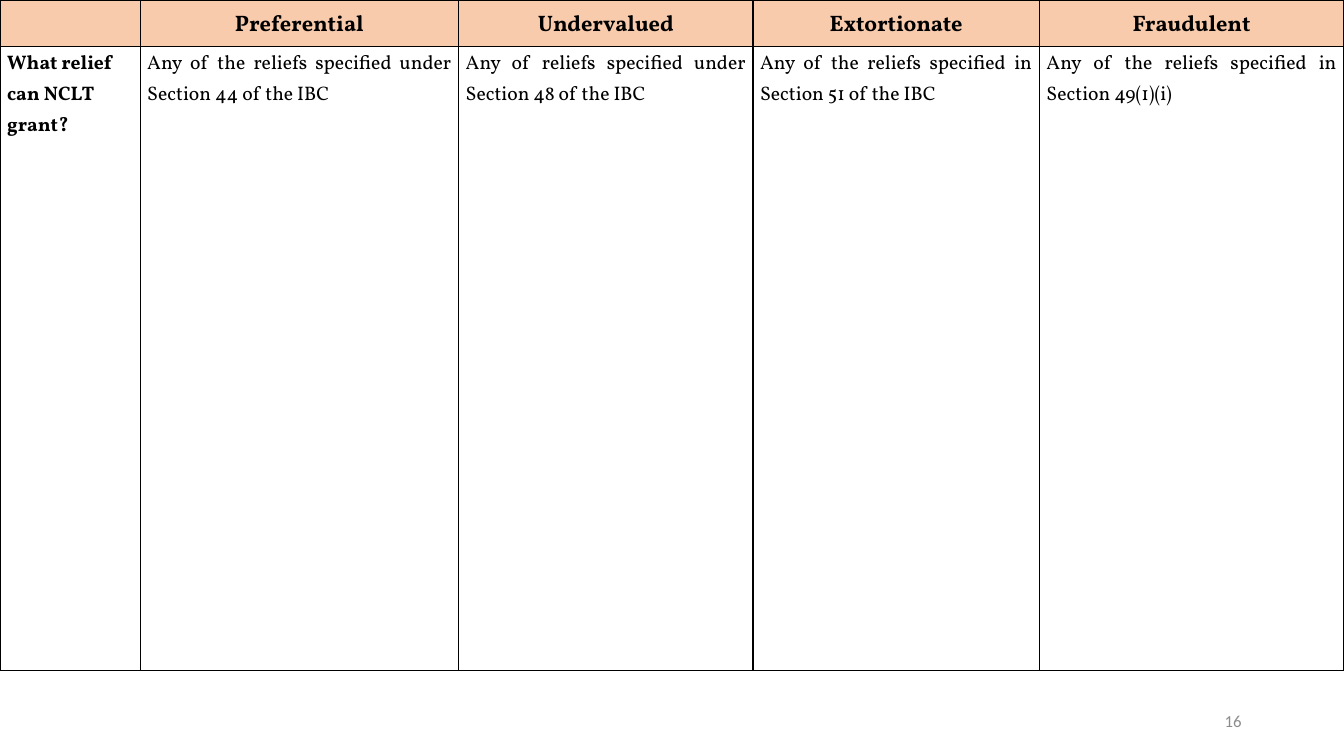
"""Build a slide comparing the reliefs available for four kinds of avoidable transaction."""
from dataclasses import dataclass

from lxml.etree import SubElement
from pptx import Presentation
from pptx.dml.color import RGBColor
from pptx.enum.text import MSO_ANCHOR, PP_ALIGN
from pptx.oxml.ns import qn
from pptx.slide import Slide
from pptx.table import _Cell as Cell
from pptx.text.text import TextFrame
from pptx.util import Pt


@dataclass(frozen=True)
class Theme:
    """Colours, fonts and type sizes of the slide."""

    header_fill: str = "F8CBAD"
    body_fill: str = "FFFFFF"
    ink: str = "000000"
    muted: str = "8C8C8C"
    table_font: str = "Vollkorn"
    number_font: str = "Calibri"
    header_size: float = 16
    body_size: float = 14
    number_size: float = 12


@dataclass(frozen=True)
class Column:
    """One table column: its width in points, heading and body text."""

    width: float
    heading: str
    body: str


THEME = Theme()
HEADER_HEIGHT = 33.1
BODY_HEIGHT = 445.7
CELL_INSET = 5.1
COLUMNS = [
    Column(100.1, "", "What relief can NCLT grant?"),
    Column(227.5, "Preferential", "Any of the reliefs specified under Section 44 of the IBC"),
    Column(210.3, "Undervalued", "Any of reliefs specified under Section 48 of the IBC"),
    Column(204.6, "Extortionate", "Any of the reliefs specified in Section 51 of the IBC"),
    Column(217.5, "Fraudulent", "Any of the reliefs specified in Section 49(1)(i)"),
]


def write_text(frame: TextFrame, text: str, *, size: float, font: str = THEME.table_font,
               color: str = THEME.ink, bold: bool = False,
               align: PP_ALIGN = PP_ALIGN.LEFT, line_spacing: float = 1.0) -> None:
    """Write one formatted paragraph into a text frame."""
    paragraph = frame.paragraphs[0]
    paragraph.alignment = align
    paragraph.line_spacing = line_spacing
    paragraph.font.size = Pt(size)
    if text:
        run = paragraph.add_run()
        run.text = text
        run.font.size = Pt(size)
        run.font.name = font
        run.font.bold = bold
        run.font.color.rgb = RGBColor.from_string(color)


def style_cell(cell: Cell, fill: str, anchor: MSO_ANCHOR) -> None:
    """Set the insets, anchor, borders and fill of a cell."""
    cell.margin_left = cell.margin_right = Pt(CELL_INSET)
    cell.margin_top = cell.margin_bottom = 0
    cell.vertical_anchor = anchor
    properties = cell._tc.get_or_add_tcPr()
    for side in ("a:lnL", "a:lnR", "a:lnT", "a:lnB"):
        line = SubElement(properties, qn(side), w=str(Pt(1)))
        solid = SubElement(line, qn("a:solidFill"))
        SubElement(solid, qn("a:srgbClr"), val=THEME.ink)
    cell.fill.solid()
    cell.fill.fore_color.rgb = RGBColor.from_string(fill)


def add_relief_table(slide: Slide) -> None:
    """Add the table of reliefs across the full slide width."""
    width = sum(column.width for column in COLUMNS)
    table = slide.shapes.add_table(2, len(COLUMNS), 0, 0, Pt(width),
                                   Pt(HEADER_HEIGHT + BODY_HEIGHT)).table
    table.rows[0].height = Pt(HEADER_HEIGHT)
    table.rows[1].height = Pt(BODY_HEIGHT)
    for index, column in enumerate(COLUMNS):
        table.columns[index].width = Pt(column.width)
        heading, body = table.cell(0, index), table.cell(1, index)
        style_cell(heading, THEME.header_fill, MSO_ANCHOR.MIDDLE)
        style_cell(body, THEME.body_fill, MSO_ANCHOR.TOP)
        write_text(heading.text_frame, column.heading, size=THEME.header_size, bold=True,
                   align=PP_ALIGN.CENTER, line_spacing=1.15)
        is_label = index == 0
        write_text(body.text_frame, column.body, size=THEME.body_size, bold=is_label,
                   align=PP_ALIGN.LEFT if is_label else PP_ALIGN.JUSTIFY, line_spacing=1.15)


def add_page_number(slide: Slide, number: str) -> None:
    """Add the page number at the lower right."""
    frame = slide.shapes.add_textbox(Pt(678), Pt(500.5), Pt(216), Pt(28.75)).text_frame
    frame.word_wrap = True
    frame.vertical_anchor = MSO_ANCHOR.MIDDLE
    write_text(frame, number, size=THEME.number_size, font=THEME.number_font,
               color=THEME.muted, align=PP_ALIGN.RIGHT)


def main() -> None:
    """Build and save the presentation."""
    presentation = Presentation()
    presentation.slide_width = Pt(960)
    presentation.slide_height = Pt(540)
    slide = presentation.slides.add_slide(presentation.slide_layouts[6])
    add_page_number(slide, "16")
    add_relief_table(slide)
    presentation.save("out.pptx")


if __name__ == "__main__":
    main()
